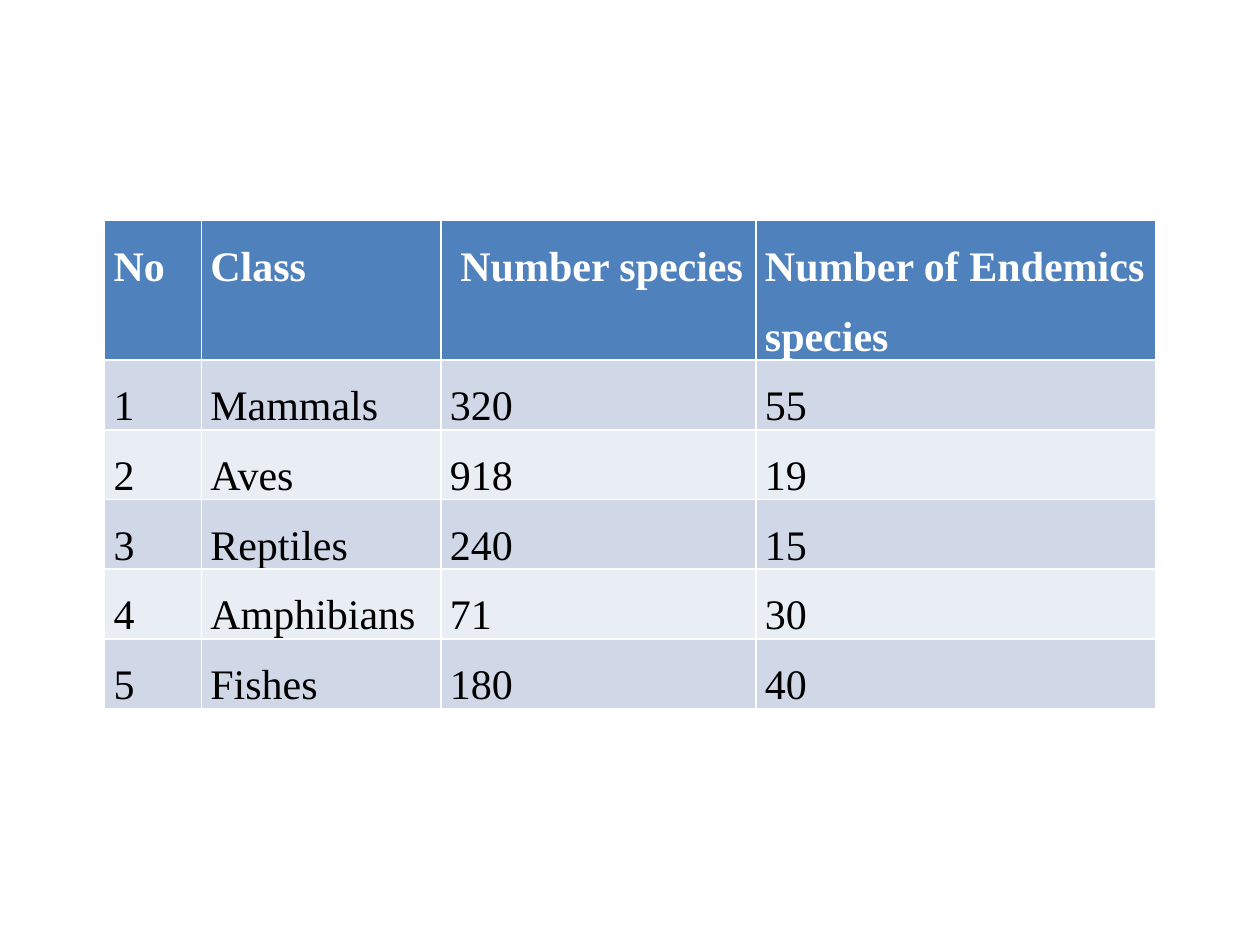
"""Build a slide with a table of species and endemics by animal class."""
from pptx import Presentation
from pptx.dml.color import RGBColor
from pptx.enum.text import PP_ALIGN as Align
from pptx.util import Cm, Pt

HEADINGS = ("No", "Class", " Number species", "Number of Endemics species")
CLASSES = (
    ("Mammals", 320, 55),
    ("Aves", 918, 19),
    ("Reptiles", 240, 15),
    ("Amphibians", 71, 30),
    ("Fishes", 180, 40),
)
COLUMN_WIDTHS = (1.95, 4.83, 6.35, 8.05)
ROW_HEIGHT = 0.81
TABLE_LEFT, TABLE_TOP, TABLE_HEIGHT = 2.11, 4.45, 10.67

BLUE = RGBColor(0x4F, 0x81, 0xBD)
BAND_DARK = RGBColor(0xD0, 0xD8, 0xE8)
BAND_LIGHT = RGBColor(0xE9, 0xED, 0xF4)
WHITE = RGBColor(0xFF, 0xFF, 0xFF)
BLACK = RGBColor(0, 0, 0)

MARGINS = {"margin_left": Cm(0.18), "margin_right": Cm(0.18),
           "margin_top": 0, "margin_bottom": 0}
FONT = {"name": "Times New Roman", "size": Pt(24)}


def apply(target, values):
    for key, value in values.items():
        setattr(target, key, value)


def fill_cell(cell, text, fill, color, bold, align):
    apply(cell, MARGINS)
    cell.fill.solid()
    cell.fill.fore_color.rgb = fill
    paragraph = cell.text_frame.paragraphs[0]
    apply(paragraph, {"alignment": align, "line_spacing": 1.5})
    run = paragraph.add_run()
    run.text = str(text)
    apply(run.font, {**FONT, "bold": bold})
    run.font.color.rgb = color


def main():
    deck = Presentation()
    deck.slide_width, deck.slide_height = Cm(25.4), Cm(19.05)
    slide = deck.slides.add_slide(deck.slide_layouts[6])

    rows = [HEADINGS] + [(number, *entry) for number, entry in enumerate(CLASSES, 1)]
    frame = slide.shapes.add_table(
        len(rows), len(HEADINGS), Cm(TABLE_LEFT), Cm(TABLE_TOP),
        Cm(sum(COLUMN_WIDTHS)), Cm(TABLE_HEIGHT))
    species = frame.table
    for column, width in zip(species.columns, COLUMN_WIDTHS):
        column.width = Cm(width)
    for row in species.rows:
        row.height = Cm(ROW_HEIGHT)
    frame.height = Cm(TABLE_HEIGHT)

    for r, entries in enumerate(rows):
        header = r == 0
        fill = BLUE if header else BAND_DARK if r % 2 else BAND_LIGHT
        for c, text in enumerate(entries):
            wraps = header and c == len(HEADINGS) - 1
            fill_cell(species.cell(r, c), text, fill, WHITE if header else BLACK,
                      header, Align.LEFT if wraps else Align.JUSTIFY)

    deck.save("out.pptx")


if __name__ == "__main__":
    main()
